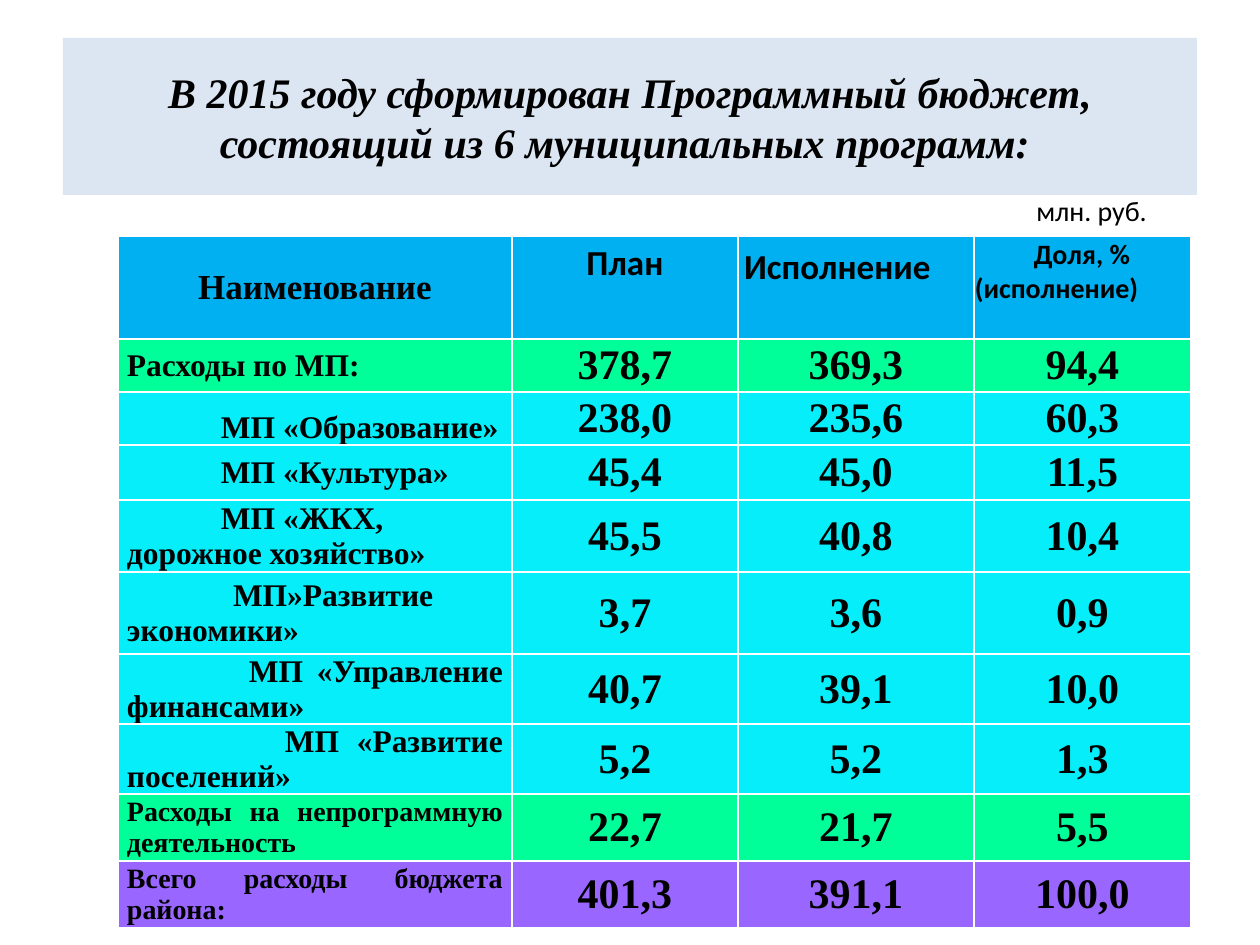
from dataclasses import dataclass
from pptx import Presentation
from pptx.dml.color import RGBColor
from pptx.enum.shapes import MSO_SHAPE as Shape
from pptx.enum.text import MSO_ANCHOR as Anchor, PP_ALIGN as Align
from pptx.util import Emu, Pt

PX_PER_INCH = 126


@dataclass(frozen=True)
class Theme:
    serif: str = "Times New Roman"
    sans: str = "Calibri"
    ink: str = "000000"
    banner: str = "DCE6F2"
    header: str = "00B0F0"
    subtotal: str = "00FF99"
    program: str = "06EEFA"
    total: str = "9966FF"
    large: int = 24
    heading: int = 20
    body: int = 18
    small: int = 16


THEME = Theme()

COLUMNS = [394, 226, 236, 217]
HEADER_HEIGHT = 103

# Header: text, font, size, alignment, anchor, margins (l, t, r, b), indent
HEADERS = [
    ("Наименование", THEME.serif, THEME.heading, Align.CENTER, Anchor.MIDDLE, (1, 1, 1, 0), 0),
    ("План", THEME.sans, THEME.heading, Align.CENTER, Anchor.TOP, (13, 6, 13, 6), 0),
    ("Исполнение", THEME.sans, THEME.heading, Align.CENTER, Anchor.TOP, (1, 10, 38, 0), 0),
    ("Доля, % (исполнение)", THEME.sans, THEME.small, Align.LEFT, Anchor.TOP, (1, 2, 1, 0), 59),
]

# Body: name, values, height, fill, size, alignment, anchor, indent
ROWS = [
    ("Расходы по МП:", ("378,7", "369,3", "94,4"), 53,
     THEME.subtotal, THEME.body, Align.LEFT, Anchor.MIDDLE, 0),
    ("МП «Образование»", ("238,0", "235,6", "60,3"), 53,
     THEME.program, THEME.body, Align.LEFT, Anchor.BOTTOM, 94),
    ("МП «Культура»", ("45,4", "45,0", "11,5"), 55,
     THEME.program, THEME.body, Align.LEFT, Anchor.MIDDLE, 94),
    ("МП «ЖКХ, дорожное хозяйство»", ("45,5", "40,8", "10,4"), 72,
     THEME.program, THEME.body, Align.LEFT, Anchor.MIDDLE, 94),
    ("МП»Развитие экономики»", ("3,7", "3,6", "0,9"), 82,
     THEME.program, THEME.body, Align.JUSTIFY, Anchor.MIDDLE, 106),
    ("МП «Управление финансами»", ("40,7", "39,1", "10,0"), 70,
     THEME.program, THEME.body, Align.JUSTIFY, Anchor.MIDDLE, 122),
    ("МП «Развитие поселений»", ("5,2", "5,2", "1,3"), 70,
     THEME.program, THEME.body, Align.JUSTIFY, Anchor.MIDDLE, 158),
    ("Расходы на непрограммную деятельность", ("22,7", "21,7", "5,5"), 67,
     THEME.subtotal, THEME.small, Align.JUSTIFY, Anchor.MIDDLE, 0),
    ("Всего расходы бюджета района:", ("401,3", "391,1", "100,0"), 67,
     THEME.total, THEME.small, Align.JUSTIFY, Anchor.MIDDLE, 0),
]


def px(length):
    return Emu(round(length * 914400 / PX_PER_INCH))


def paint(target, color):
    target.fill.solid()
    target.fill.fore_color.rgb = RGBColor.from_string(color)


def write(frame, text, font=THEME.serif, size=THEME.body, bold=True,
          italic=False, align=Align.LEFT, indent=0):
    frame.word_wrap = True
    para = frame.paragraphs[0]
    para.alignment = align
    if indent:
        properties = para._p.get_or_add_pPr()
        properties.set("marL", "0")
        properties.set("indent", str(px(indent)))
    span = para.add_run()
    span.text = text
    span.font.name, span.font.size = font, Pt(size)
    span.font.bold, span.font.italic = bold, italic
    span.font.color.rgb = RGBColor.from_string(THEME.ink)


def fill_cell(cell, text, color, anchor=Anchor.MIDDLE, margins=(9, 0, 9, 0), **style):
    paint(cell, color)
    cell.vertical_anchor = anchor
    (cell.margin_left, cell.margin_top,
     cell.margin_right, cell.margin_bottom) = map(px, margins)
    write(cell.text_frame, text, **style)


def add_title(page, box):
    banner = page.shapes.add_shape(Shape.RECTANGLE, *map(px, box))
    banner.shadow.inherit = False
    banner.line.fill.background()
    paint(banner, THEME.banner)
    banner.text_frame.vertical_anchor = Anchor.MIDDLE
    write(banner.text_frame,
          "В 2015 году сформирован Программный бюджет, состоящий из 6 муниципальных программ: ",
          size=THEME.large, italic=True, align=Align.CENTER)


def add_unit(page, box):
    label = page.shapes.add_textbox(*map(px, box))
    write(label.text_frame, "млн. руб.", font=THEME.sans, size=THEME.small, bold=False)


def add_budget_table(page, left, top):
    heights = [HEADER_HEIGHT] + [row[2] for row in ROWS]
    box = (left, top, sum(COLUMNS), sum(heights))
    table = page.shapes.add_table(len(heights), len(COLUMNS), *map(px, box)).table
    table.horz_banding = False
    for column, width in zip(table.columns, COLUMNS):
        column.width = px(width)
    for row, height in zip(table.rows, heights):
        row.height = px(height)

    # Header row
    for index, (text, font, size, align, anchor, margins, indent) in enumerate(HEADERS):
        fill_cell(table.cell(0, index), text, THEME.header, anchor, margins,
                  font=font, size=size, align=align, indent=indent)

    # Programs and totals
    for line, (name, values, _, color, size, align, anchor, indent) in enumerate(ROWS, 1):
        fill_cell(table.cell(line, 0), name, color, anchor,
                  size=size, align=align, indent=indent)
        for index, value in enumerate(values, 1):
            fill_cell(table.cell(line, index), value, color,
                      size=THEME.large, align=Align.CENTER)


def main():
    deck = Presentation()
    deck.slide_width, deck.slide_height = px(1260), px(945)
    page = deck.slides.add_slide(deck.slide_layouts[6])
    add_title(page, (63, 38, 1134, 157))
    add_budget_table(page, 118, 236)
    add_unit(page, (1024, 187, 186, 47))
    deck.save("out.pptx")


if __name__ == "__main__":
    main()
